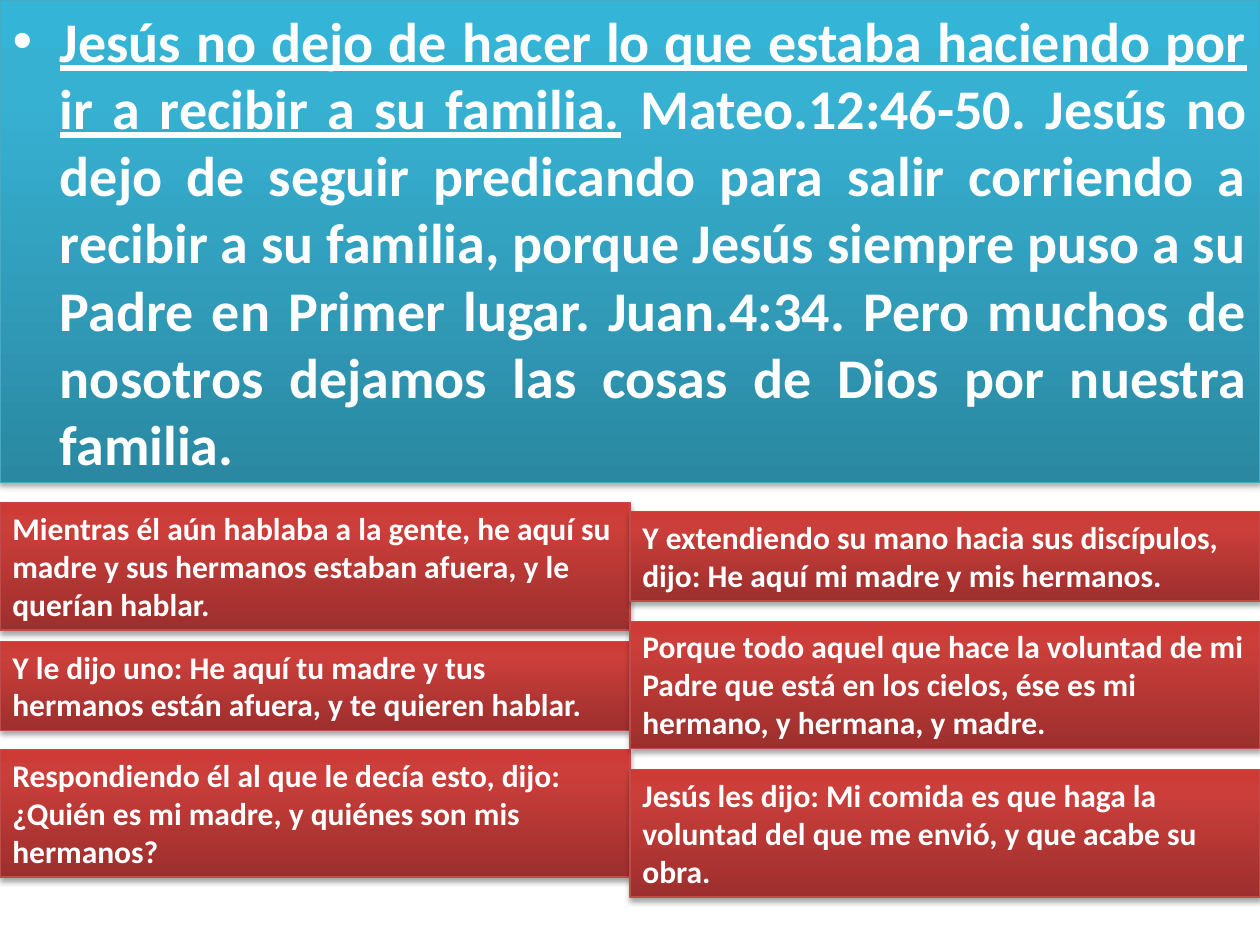
from pptx import Presentation
from pptx.dml.color import RGBColor
from pptx.enum.shapes import MSO_SHAPE as Shape
from pptx.enum.text import MSO_ANCHOR as Anchor, MSO_AUTO_SIZE as AutoSize, PP_ALIGN as Align
from pptx.oxml import parse_xml
from pptx.oxml.ns import nsdecls, qn
from pptx.util import Pt
from copy import deepcopy

TEAL = (("2A88A2", "37B1D2", "34B4D6"), "46AAC5")
RED = (("9C2F2D", "CB3E3A", "CE3B37"), "BF4C48")
STOPS = (0, 0.8, 1)
WIDTH, HEIGHT = 720, 540
COLUMN = WIDTH / 2
LINE_HEIGHT, PADDING = 21.6, 7.92

MESSAGE = (
    ("Jesús no dejo de hacer lo que estaba haciendo por ir a recibir a su familia.", True),
    (" Mateo.12:46-50. Jesús no dejo de seguir predicando para salir corriendo a recibir "
     "a su familia, porque Jesús siempre puso a su Padre en Primer lugar. Juan.4:34. Pero "
     "muchos de nosotros dejamos las cosas de Dios por nuestra familia.", False),
)
VERSES = (
    (0, 287.28, 3, "Mientras él aún hablaba a la gente, he aquí su madre y sus hermanos "
                   "estaban afuera, y le querían hablar."),
    (0, 366.48, 2, "Y le dijo uno: He aquí tu madre y tus hermanos están afuera, y te "
                   "quieren hablar."),
    (0, 428.4, 3, "Respondiendo él al que le decía esto, dijo: ¿Quién es mi madre, y "
                  "quiénes son mis hermanos?"),
    (1, 292.32, 2, "Y extendiendo su mano hacia sus discípulos, dijo: He aquí mi madre y "
                   "mis hermanos."),
    (1, 354.96, 3, "Porque todo aquel que hace la voluntad de mi Padre que está en los "
                   "cielos, ése es mi hermano, y hermana, y madre."),
    (1, 439.92, 3, "Jesús les dijo: Mi comida es que haga la voluntad del que me envió, y "
                   "que acabe su obra."),
)


def rgb(value):
    return RGBColor.from_string(value)


class Painter:
    """Draws glossy text panels on one slide in a shared style."""

    font = "Calibri"
    ink = "FFFFFF"

    def __init__(self, slide):
        self.slide = slide

    def gloss(self, shape, palette):
        colours, border = palette
        shape.fill.gradient()
        shape.fill.gradient_angle = 90
        stops = shape.element.spPr.find(".//" + qn("a:gsLst"))
        stops.append(deepcopy(stops[0]))
        for stop, position, colour in zip(shape.fill.gradient_stops, STOPS, colours):
            stop.position = position
            stop.color.rgb = rgb(colour)
        shape.line.color.rgb = rgb(border)
        shape.line.width = Pt(0.75)
        shape.shadow.inherit = False
        shape.element.spPr.find(qn("a:effectLst")).append(parse_xml(
            f'<a:outerShdw {nsdecls("a")} blurRad="{Pt(3.1)}" dist="{Pt(1.8)}" '
            'dir="5400000" rotWithShape="0"><a:srgbClr val="000000">'
            '<a:alpha val="35000"/></a:srgbClr></a:outerShdw>'))

    def add_span(self, para, text, size, underline=False):
        span = para.add_run()
        span.text = text
        font = span.font
        font.name, font.size, font.bold = self.font, Pt(size), True
        font.underline = underline
        font.color.rgb = rgb(self.ink)

    def message(self, spans, height):
        box = self.slide.placeholders[1]
        box.left, box.top, box.width, box.height = 0, 0, Pt(WIDTH), Pt(height)
        self.gloss(box, TEAL)
        frame = box.text_frame
        frame.word_wrap = True
        frame.auto_size = AutoSize.NONE
        frame.vertical_anchor = Anchor.TOP
        para = frame.paragraphs[0]
        para.alignment = Align.JUSTIFY
        para.space_before = Pt(0)
        properties = para._p.get_or_add_pPr()
        properties.set("marL", str(Pt(27)))
        properties.set("indent", str(Pt(-27)))
        properties.append(parse_xml(f'<a:buFont {nsdecls("a")} typeface="Arial"/>'))
        properties.append(parse_xml(f'<a:buChar {nsdecls("a")} char="•"/>'))
        for text, underline in spans:
            self.add_span(para, text, 32, underline)

    def verse(self, column, top, lines, text):
        box = self.slide.shapes.add_shape(
            Shape.RECTANGLE, Pt(column * COLUMN), Pt(top),
            Pt(COLUMN), Pt(lines * LINE_HEIGHT + PADDING))
        self.gloss(box, RED)
        frame = box.text_frame
        frame.word_wrap = True
        frame.auto_size = AutoSize.SHAPE_TO_FIT_TEXT
        frame.vertical_anchor = Anchor.TOP
        para = frame.paragraphs[0]
        para.alignment = Align.LEFT
        self.add_span(para, text, 18)


def main():
    deck = Presentation()
    deck.slide_width, deck.slide_height = Pt(WIDTH), Pt(HEIGHT)
    page = deck.slides.add_slide(deck.slide_layouts[1])
    title = page.shapes.title.element
    title.getparent().remove(title)
    painter = Painter(page)
    painter.message(MESSAGE, 275.76)
    for verse in VERSES:
        painter.verse(*verse)
    deck.save("out.pptx")


if __name__ == "__main__":
    main()
